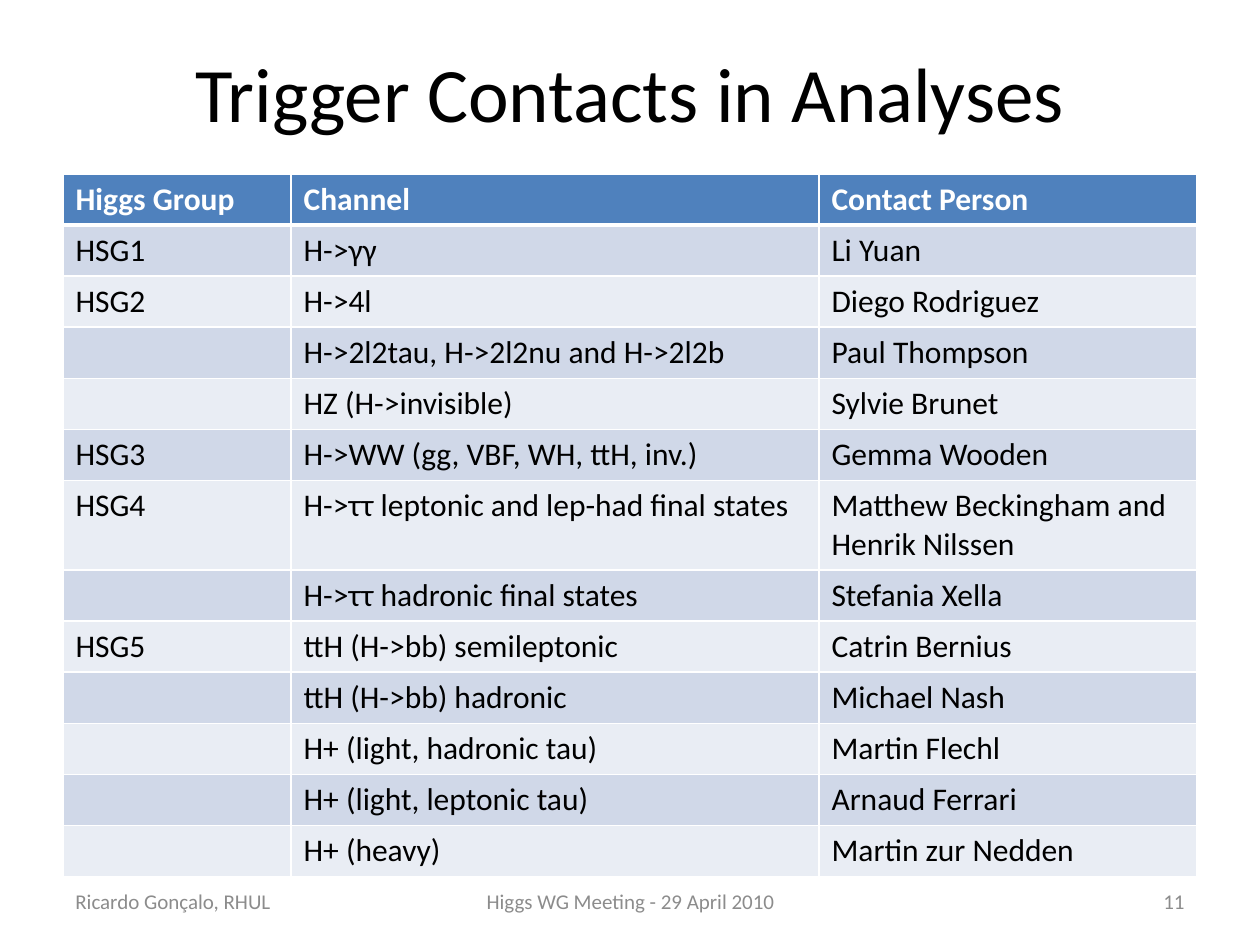
from dataclasses import dataclass

from lxml import etree
from pptx import Presentation
from pptx import util as u
from pptx.dml import color
from pptx.enum import text
from pptx.oxml import ns


@dataclass(frozen=True)
class Theme:
    """Colours, font and type sizes of the slide."""
    font: str = "Calibri"
    black: str = "000000"
    white: str = "FFFFFF"
    grey: str = "8C8C8C"
    header: str = "4F81BD"
    bands: tuple = ("D0D8E8", "E9EDF4")
    title_size: int = 44
    body_size: int = 18
    footer_size: int = 12
    thin_line: int = 1
    thick_line: int = 3


THEME = Theme()
COLUMN_WIDTHS = (1.81, 4.19, 3)
LINE_HEIGHT = 0.3
HEADINGS = ("Higgs Group", "Channel", "Contact Person")
CONTACTS = (
    ("HSG1", "H->γγ", "Li Yuan"),
    ("HSG2", "H->4l", "Diego Rodriguez"),
    ("", "H->2l2tau, H->2l2nu and H->2l2b", "Paul Thompson"),
    ("", "HZ (H->invisible)", "Sylvie Brunet"),
    ("HSG3", "H->WW (gg, VBF, WH, ttH, inv.)", "Gemma Wooden"),
    ("HSG4", "H->ττ leptonic and lep-had final states",
     "Matthew Beckingham and Henrik Nilssen"),
    ("", "H->ττ hadronic final states", "Stefania Xella"),
    ("HSG5", "ttH (H->bb) semileptonic", "Catrin Bernius"),
    ("", "ttH (H->bb) hadronic", "Michael Nash"),
    ("", "H+ (light, hadronic tau)", "Martin Flechl"),
    ("", "H+ (light, leptonic tau)", "Arnaud Ferrari"),
    ("", "H+ (heavy)", "Martin zur Nedden"),
)
FOOTERS = (
    (0, 2.33, "Ricardo Gonçalo, RHUL", text.PP_ALIGN.LEFT),
    (2.92, 3.17, "Higgs WG Meeting - 29 April 2010", text.PP_ALIGN.CENTER),
    (6.67, 2.33, "11", text.PP_ALIGN.RIGHT),
)


def write(frame, words, *, size, colour, bold=False, align=text.PP_ALIGN.LEFT):
    """Put one formatted paragraph into a text frame."""
    frame.word_wrap = True
    paragraph = frame.paragraphs[0]
    paragraph.alignment = align
    paragraph.font.size = u.Pt(size)
    if words:
        run = paragraph.add_run()
        run.text = words
        run.font.name = THEME.font
        run.font.size = u.Pt(size)
        run.font.bold = bold
        run.font.color.rgb = color.RGBColor.from_string(colour)


def add_borders(cell, top, bottom):
    """Draw white borders round a cell, with the given top and bottom widths."""
    properties = cell._tc.get_or_add_tcPr()
    widths = {"L": THEME.thin_line, "R": THEME.thin_line, "T": top, "B": bottom}
    for side, width in widths.items():
        line = etree.SubElement(properties, ns.qn(f"a:ln{side}"), w=str(u.Pt(width)))
        fill = etree.SubElement(line, ns.qn("a:solidFill"))
        etree.SubElement(fill, ns.qn("a:srgbClr"), val=THEME.white)


def add_title(slide, left, top, width, height):
    """Place and format the slide title."""
    title = slide.shapes.title
    title.left, title.top = u.Inches(left), u.Inches(top)
    title.width, title.height = u.Inches(width), u.Inches(height)
    title.text_frame.vertical_anchor = text.MSO_ANCHOR.MIDDLE
    write(title.text_frame, "Trigger Contacts in Analyses", size=THEME.title_size,
          colour=THEME.black, align=text.PP_ALIGN.CENTER)


def add_contacts(slide, left, top, width, height):
    """Fill the box with the table of contacts."""
    rows = (HEADINGS, *CONTACTS)
    table = slide.shapes.add_table(
        len(rows), len(HEADINGS), u.Inches(left), u.Inches(top),
        u.Inches(width), u.Inches(height)).table
    for column, share in zip(table.columns, COLUMN_WIDTHS):
        column.width = u.Inches(width * share / sum(COLUMN_WIDTHS))
    row_height = (height - LINE_HEIGHT) / len(rows)
    for index, values in enumerate(rows):
        heading = index == 0
        two_lines = "Matthew Beckingham and Henrik Nilssen" in values
        table.rows[index].height = u.Inches(row_height + LINE_HEIGHT * two_lines)
        fill = THEME.header if heading else THEME.bands[(index - 1) % 2]
        top_line = THEME.thick_line if index == 1 else THEME.thin_line
        bottom_line = THEME.thick_line if heading else THEME.thin_line
        for cell, words in zip(table.rows[index].cells, values):
            add_borders(cell, top_line, bottom_line)
            cell.fill.solid()
            cell.fill.fore_color.rgb = color.RGBColor.from_string(fill)
            write(cell.text_frame, words, size=THEME.body_size, bold=heading,
                  colour=THEME.white if heading else THEME.black)


def add_footer(slide, left, top, height):
    """Place the author, meeting and page number along the bottom."""
    for offset, width, words, align in FOOTERS:
        box = slide.shapes.add_textbox(u.Inches(left + offset), u.Inches(top),
                                       u.Inches(width), u.Inches(height))
        box.text_frame.vertical_anchor = text.MSO_ANCHOR.MIDDLE
        write(box.text_frame, words, size=THEME.footer_size,
              colour=THEME.grey, align=align)


def main():
    """Build and save the slide."""
    presentation = Presentation()
    presentation.slide_width = u.Inches(10)
    presentation.slide_height = u.Inches(7.5)
    slide = presentation.slides.add_slide(presentation.slide_layouts[5])
    add_title(slide, 0.5, 0.3, 9, 0.86)
    add_contacts(slide, 0.5, 1.38, 9, 5.57)
    add_footer(slide, 0.5, 6.95, 0.4)
    presentation.save("out.pptx")


if __name__ == "__main__":
    main()
